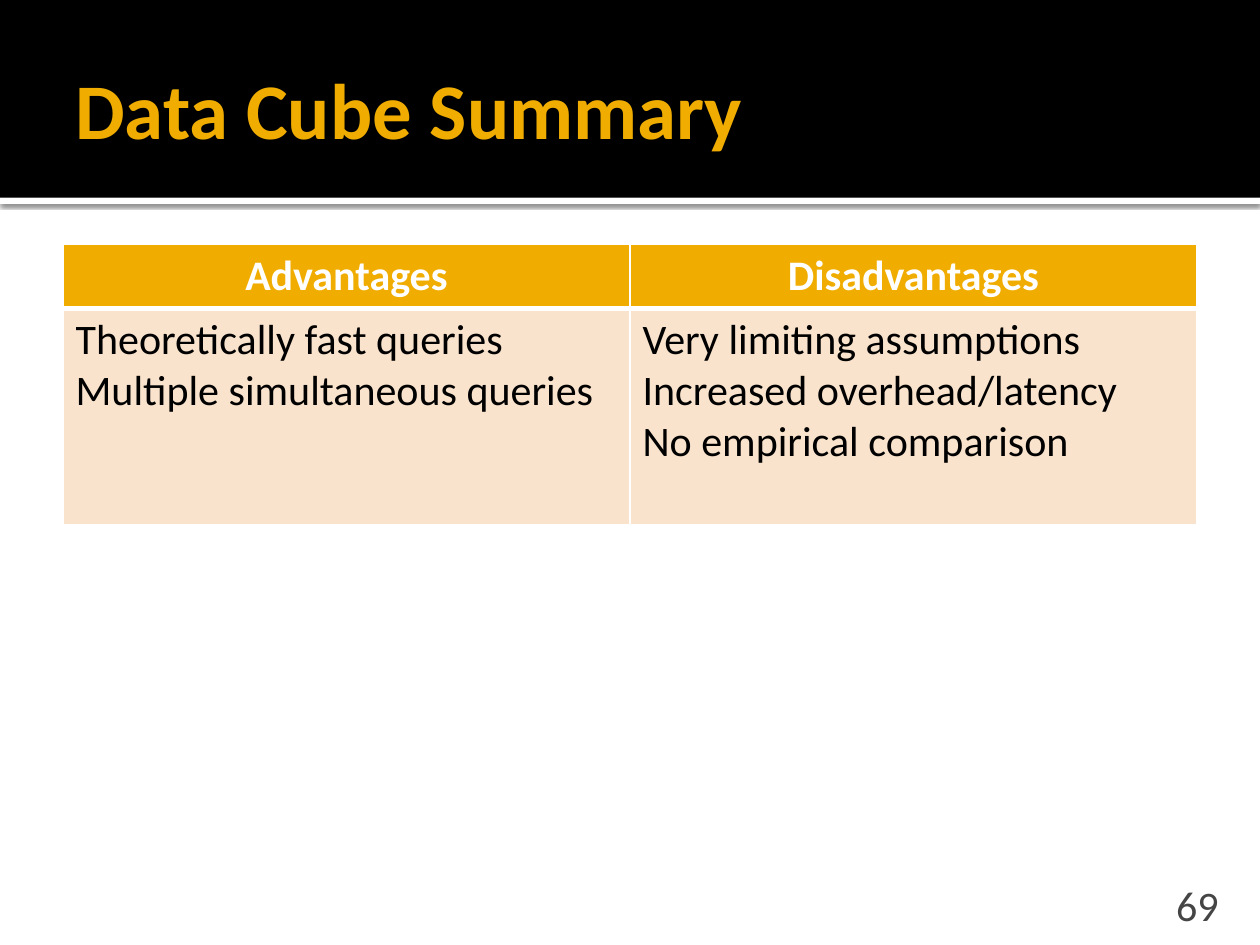
"""Build the Data Cube Summary slide."""
from lxml import etree
from pptx import Presentation
from pptx.dml.color import RGBColor
from pptx.enum.shapes import MSO_SHAPE
from pptx.enum.text import MSO_ANCHOR, PP_ALIGN
from pptx.oxml import parse_xml
from pptx.oxml.ns import nsdecls, qn
from pptx.util import Pt

RECT = MSO_SHAPE.RECTANGLE
MIDDLE, BOTTOM = MSO_ANCHOR.MIDDLE, MSO_ANCHOR.BOTTOM
LEFT, CENTER, RIGHT = PP_ALIGN.LEFT, PP_ALIGN.CENTER, PP_ALIGN.RIGHT
GOLD, CREAM, WHITE, BLACK, GRAY = "F0AD00", "F9E3CC", "FFFFFF", "000000", "454545"


def color(code):
    return RGBColor.from_string(code)


def write(frame, lines, size, code, bold, align):
    for i, line in enumerate(lines):
        para = frame.paragraphs[0] if i == 0 else frame.add_paragraph()
        para.alignment = align
        run = para.add_run()
        run.text = line
        run.font.name = "Calibri"
        run.font.size = Pt(size)
        run.font.bold = bold
        run.font.color.rgb = color(code)


deck = Presentation()
deck.slide_width, deck.slide_height = Pt(720), Pt(540)
slide = deck.slides.add_slide(deck.slide_layouts[6])
shapes = slide.shapes

for top, height, code in [(113, 3.6, WHITE), (0, 113, BLACK)]:
    band = shapes.add_shape(RECT, 0, Pt(top), Pt(720), Pt(height))
    band.shadow.inherit = False
    band.fill.solid()
    band.fill.fore_color.rgb = color(code)
    band.line.fill.background()
    if code == WHITE:
        effects = band._element.spPr.find(qn("a:effectLst"))
        effects.append(parse_xml(
            f'<a:outerShdw {nsdecls("a")} blurRad="{Pt(2.5)}" dist="{Pt(0.8)}" '
            'dir="5400000" algn="t" rotWithShape="0"><a:srgbClr val="000000">'
            '<a:alpha val="60000"/></a:srgbClr></a:outerShdw>'))

texts = [
    ("Data Cube Summary", (36, 12.24, 648, 98.64), (7.2, 3.6, 3.6, 3.6),
     MIDDLE, 45, GOLD, True, LEFT),
    ("69", (645.84, 509.76, 57.6, 21.6), (7.2, 3.6, 7.2, 0),
     BOTTOM, 24, GRAY, False, RIGHT),
]
for text, place, inset, anchor, size, code, bold, align in texts:
    frame = shapes.add_textbox(*map(Pt, place)).text_frame
    frame.word_wrap = True
    frame.vertical_anchor = anchor
    (frame.margin_left, frame.margin_top,
     frame.margin_right, frame.margin_bottom) = map(Pt, inset)
    write(frame, [text], size, code, bold, align)

rows = [
    [["Advantages"], ["Disadvantages"]],
    [["Theoretically fast queries", "Multiple simultaneous queries"],
     ["Very limiting assumptions", "Increased overhead/latency",
      "No empirical comparison"]],
]
looks = [
    (36.5, GOLD, WHITE, True, CENTER, {"L": 1, "R": 1, "T": 1, "B": 3}),
    (123.5, CREAM, BLACK, False, LEFT, {"L": 1, "R": 1, "T": 3, "B": 1}),
]
table = shapes.add_table(2, 2, Pt(36), Pt(139.7), Pt(648), Pt(160)).table
table.horz_banding = False
for r, (height, back, code, bold, align, edges) in enumerate(looks):
    table.rows[r].height = Pt(height)
    for c, lines in enumerate(rows[r]):
        cell = table.cell(r, c)
        write(cell.text_frame, lines, 24, code, bold, align)
        props = cell._tc.get_or_add_tcPr()
        for side, width in edges.items():
            edge = etree.SubElement(props, qn(f"a:ln{side}"), w=str(Pt(width)))
            fill = etree.SubElement(edge, qn("a:solidFill"))
            etree.SubElement(fill, qn("a:srgbClr"), val=WHITE)
        cell.fill.solid()
        cell.fill.fore_color.rgb = color(back)

deck.save("out.pptx")
